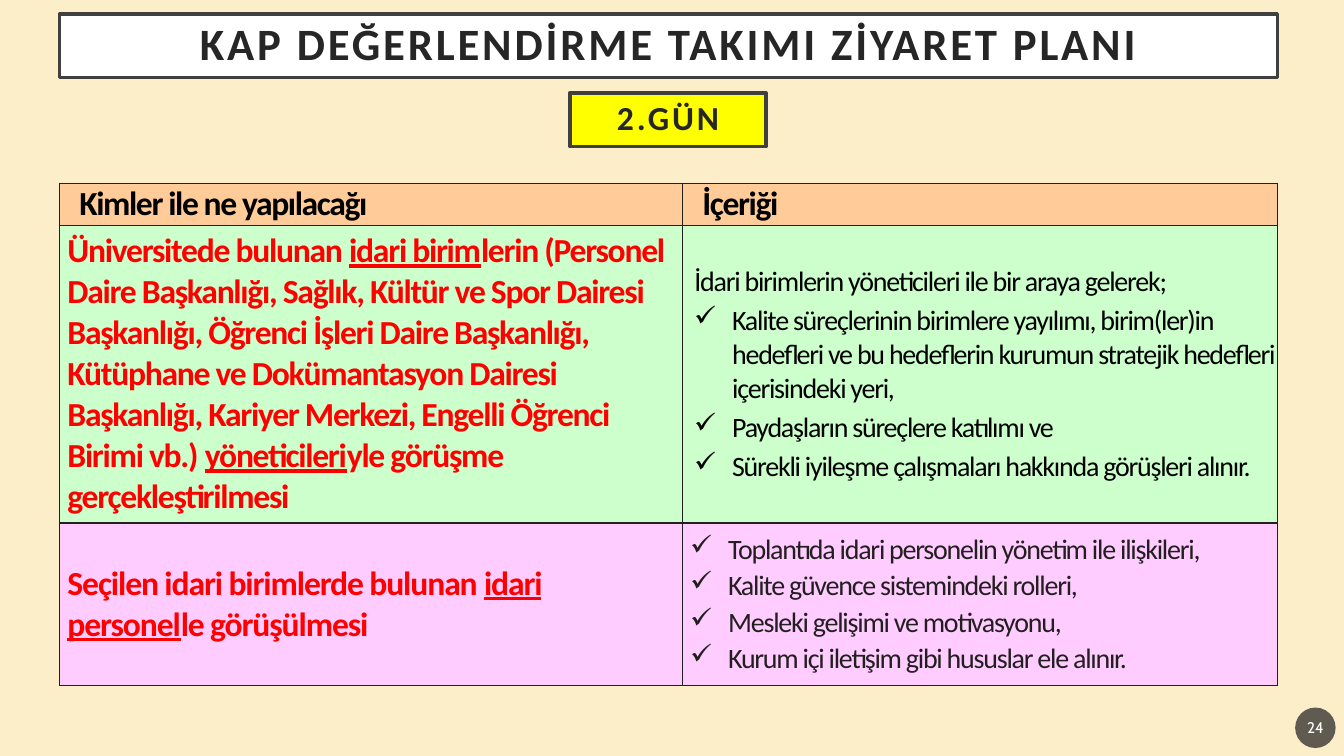
from dataclasses import dataclass

from lxml.etree import SubElement
from pptx import Presentation
from pptx.dml.color import RGBColor
from pptx.enum.shapes import MSO_SHAPE as Shape
from pptx.enum.text import MSO_ANCHOR as Anchor, MSO_AUTO_SIZE as AutoSize, PP_ALIGN as Align
from pptx.oxml.ns import qn
from pptx.util import Cm, Pt

LEFT, TABLE_TOP = 1.5, 4.62
COLUMN_WIDTHS = (15.7, 14.99)
BORDER = "231F20"


@dataclass
class Line:
    """One paragraph; words between underscores are underlined."""
    text: str
    size: float = 20
    color: str = "000000"
    bold: bool = False
    tracking: float = -0.9
    font: str = "Calibri"
    align: Align = Align.LEFT
    line_spacing: float = 1.0
    before: float = 0
    margin: float = 0
    hanging: float = 0


@dataclass
class Band:
    """One table of a single row."""
    height: float
    fill: str
    cells: tuple[list[Line], list[Line]]


@dataclass
class Box:
    left: float
    top: float
    width: float
    height: float
    fill: str
    line: Line


def set_color(target, color: str) -> None:
    """Colour a fill, or the fill of a line."""
    target.solid()
    target.fore_color.rgb = RGBColor.from_string(color)


def write_lines(frame, lines: list[Line]) -> None:
    for index, line in enumerate(lines):
        paragraph = frame.paragraphs[0] if index == 0 else frame.add_paragraph()
        paragraph.alignment = line.align
        paragraph.line_spacing = line.line_spacing
        paragraph.space_before = Pt(line.before)
        properties = paragraph._p.get_or_add_pPr()
        properties.set("marL", str(Cm(line.margin)))
        properties.set("indent", str(Cm(-line.hanging)))
        if line.hanging:
            SubElement(properties, qn("a:buChar"), char="✓")
        else:
            SubElement(properties, qn("a:buNone"))
        font = paragraph.font
        font.name, font.size, font.bold = line.font, Pt(line.size), line.bold
        set_color(font.fill, line.color)
        for part, text in enumerate(line.text.split("_")):
            run = paragraph.add_run()
            run.text = text
            run._r.get_or_add_rPr().set("spc", str(round(line.tracking * 100)))
            if part % 2:
                run.font.underline = True


def format_box(shape, box: Box, inset: float) -> None:
    shape.left, shape.top = Cm(box.left), Cm(box.top)
    shape.width, shape.height = Cm(box.width), Cm(box.height)
    set_color(shape.fill, box.fill)
    frame = shape.text_frame
    frame.auto_size, frame.word_wrap = AutoSize.NONE, True
    frame.vertical_anchor = Anchor.MIDDLE
    frame.margin_left = frame.margin_right = Cm(inset)
    frame.margin_top = frame.margin_bottom = Cm(inset)
    write_lines(frame, [box.line])


def outline(shape) -> None:
    set_color(shape.line.fill, "404040")
    shape.line.width = Pt(2.5)


def add_shape(slide, kind: Shape, box: Box, inset: float):
    shape = slide.shapes.add_shape(kind, 0, 0, Cm(box.width), Cm(box.height))
    shape.shadow.inherit = False
    format_box(shape, box, inset)
    return shape


def add_band(slide, top: float, band: Band) -> None:
    table = slide.shapes.add_table(1, 2, Cm(LEFT), Cm(top), Cm(sum(COLUMN_WIDTHS)),
                                   Cm(band.height)).table
    table.first_row = table.horz_banding = False
    for column, width in enumerate(COLUMN_WIDTHS):
        table.columns[column].width = Cm(width)
        cell = table.cell(0, column)
        cell.margin_left = cell.margin_right = cell.margin_top = cell.margin_bottom = 0
        cell.vertical_anchor = Anchor.MIDDLE
        properties = cell._tc.get_or_add_tcPr()
        for side in ("a:lnL", "a:lnR", "a:lnT", "a:lnB"):
            border = SubElement(properties, qn(side), w=str(Pt(1)))
            SubElement(SubElement(border, qn("a:solidFill")), qn("a:srgbClr"), val=BORDER)
        set_color(cell.fill, band.fill)
        write_lines(cell.text_frame, band.cells[column])


def header(text: str) -> list[Line]:
    return [Line(text, 24, bold=True, tracking=-1, before=1.6, margin=0.5)]


def participants(text: str, tracking: float, before: float = 0) -> list[Line]:
    return [Line(text, 24, "FF0000", True, tracking, before=before, margin=0.2)]


def checklist(items: list[str], color: str, before: float, margin: float) -> list[Line]:
    return [Line(item, color=color, before=before, margin=margin, hanging=0.96) for item in items]


def heading(text: str, size: float) -> Line:
    return Line(text, size, "262626", True, 2, align=Align.CENTER, line_spacing=0.9)


TITLE = Box(LEFT, 0.35, 30.69, 1.6, "FFFFFF",
            heading("KAP DEĞERLENDİRME TAKIMI ZİYARET PLANI", 32))
DAY = Box(14.36, 2.34, 4.95, 1.35, "FFFF00", heading("2.GÜN", 24))
PAGE_NUMBER = Box(32.64, 17.83, 1.02, 1.02, "1D1D1D",
                  Line("24", 11, "FFFFFF", tracking=0, font="Cabin", align=Align.CENTER))

BANDS = [
    Band(1.06, "FFCC99", (header("Kimler ile ne yapılacağı"), header("İçeriği"))),
    Band(7.5, "CCFFCC", (
        participants(
            "Üniversitede bulunan _idari birim_lerin (Personel Daire Başkanlığı, Sağlık, "
            "Kültür ve Spor Dairesi Başkanlığı, Öğrenci İşleri Daire Başkanlığı, Kütüphane ve "
            "Dokümantasyon Dairesi Başkanlığı, Kariyer Merkezi, Engelli Öğrenci Birimi vb.) "
            "_yöneticileri_yle görüşme gerçekleştirilmesi", -0.9),
        [Line("İdari birimlerin yöneticileri ile bir araya gelerek;", before=3.3, margin=0.3)]
        + checklist([
            "Kalite süreçlerinin birimlere yayılımı, birim(ler)in hedefleri ve bu hedeflerin "
            "kurumun stratejik hedefleri içerisindeki yeri,",
            "Paydaşların süreçlere katılımı ve",
            "Sürekli iyileşme çalışmaları hakkında görüşleri alınır.",
        ], "000000", 3.3, 1.25))),
    Band(4.09, "FFCCFF", (
        participants("Seçilen idari birimlerde bulunan _idari personel_le görüşülmesi", -0.8, 7.5),
        checklist([
            "Toplantıda idari personelin yönetim ile ilişkileri,",
            "Kalite güvence sistemindeki rolleri,",
            "Mesleki gelişimi ve motivasyonu,",
            "Kurum içi iletişim gibi hususlar ele alınır.",
        ], BORDER, 1.6, 1.15))),
]


def main() -> None:
    presentation = Presentation()
    presentation.slide_width, presentation.slide_height = Cm(33.87), Cm(19.05)
    slide = presentation.slides.add_slide(presentation.slide_layouts[5])
    set_color(slide.background.fill, "FBEEC9")

    # Title and day
    title = slide.shapes.title
    format_box(title, TITLE, 0.5)
    outline(title)
    outline(add_shape(slide, Shape.RECTANGLE, DAY, 0.5))

    # Visit plan, one band under the other
    top = TABLE_TOP
    for band in BANDS:
        add_band(slide, top, band)
        top += band.height

    # Page number on a translucent disc
    disc = add_shape(slide, Shape.OVAL, PAGE_NUMBER, 0.05)
    disc.line.fill.background()
    disc_color = disc.fill._xPr.find(qn("a:solidFill")).find(qn("a:srgbClr"))
    SubElement(disc_color, qn("a:alpha"), val="70000")

    presentation.save("out.pptx")


if __name__ == "__main__":
    main()
